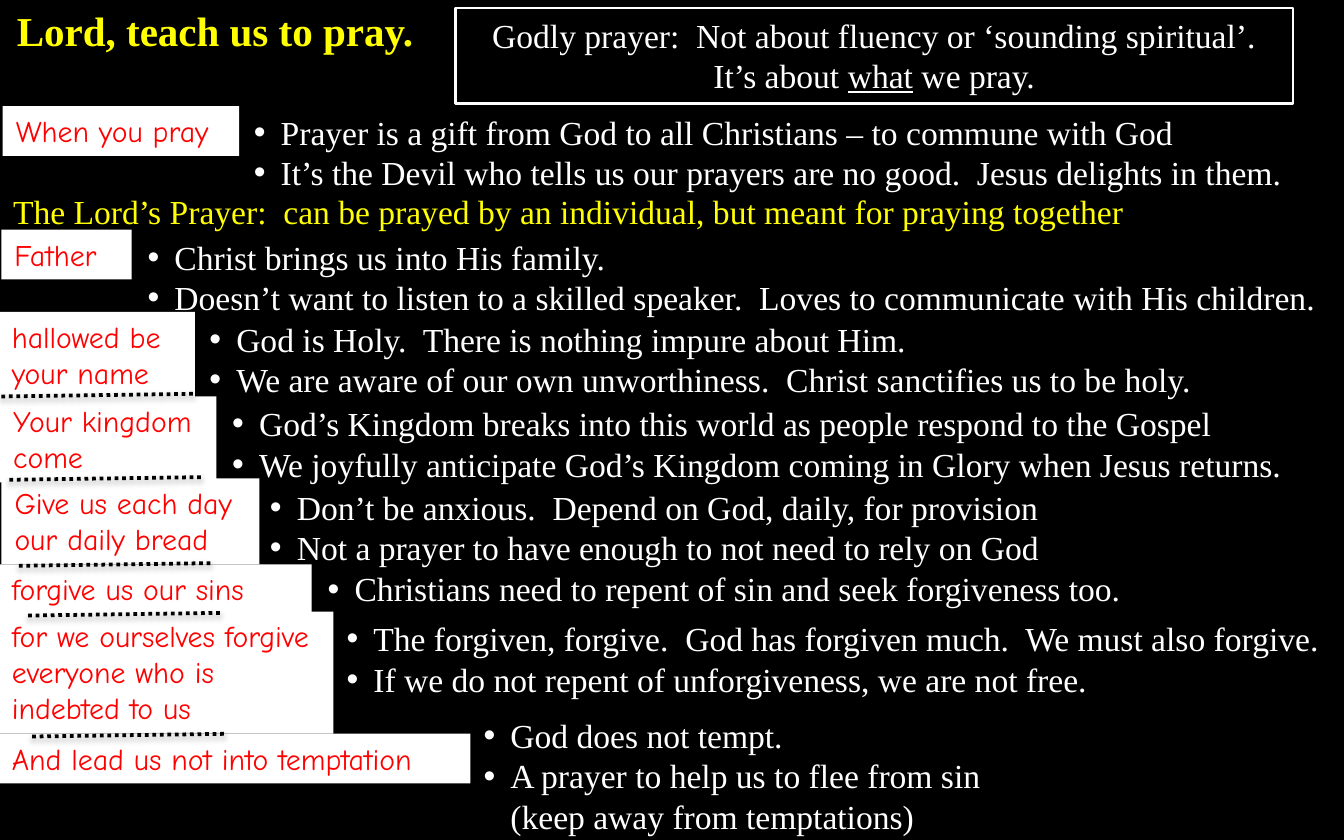
from lxml import etree
from pptx import Presentation
from pptx.dml.color import RGBColor
from pptx.enum.dml import MSO_LINE
from pptx.enum.shapes import MSO_CONNECTOR, MSO_SHAPE
from pptx.enum.text import MSO_ANCHOR, MSO_AUTO_SIZE, PP_ALIGN
from pptx.oxml import parse_xml
from pptx.oxml.ns import qn
from pptx.util import Inches, Pt

RECT, STRAIGHT = MSO_SHAPE.RECTANGLE, MSO_CONNECTOR.STRAIGHT
DOTS = MSO_LINE.ROUND_DOT
LEFT, CENTER = PP_ALIGN.LEFT, PP_ALIGN.CENTER
COLS, ROWS = 100, 62.5
CELL = Inches(0.1)
BLACK, WHITE, RED, YELLOW = "000000", "FFFFFF", "FF0000", "FFFF00"

SERIF = {"name": "Times New Roman", "size": Pt(18)}
HEAD = {"name": "Times New Roman", "size": Pt(22), "bold": True}
HAND = {"name": "Comic Neue", "size": Pt(16)}
FRAME = {"word_wrap": True, "auto_size": MSO_AUTO_SIZE.SHAPE_TO_FIT_TEXT,
         "vertical_anchor": MSO_ANCHOR.TOP}

SHADOW = (
    '<a:effectLst xmlns:a="http://schemas.openxmlformats.org/drawingml/2006/main">'
    '<a:outerShdw blurRad="40000" dist="20000" dir="5400000" rotWithShape="0">'
    '<a:srgbClr val="000000"><a:alpha val="38000"/></a:srgbClr>'
    '</a:outerShdw></a:effectLst>'
)

PARTS = [
    ((0.2, 7.9, 17.6), 1, "When you pray", (17.9, 7.8), [
        "Prayer is a gift from God to all Christians – to commune with God",
        "It’s the Devil who tells us our prayers are no good.  Jesus delights in them."]),
    ((0.1, 17.1, 9.7), 1, "Father", (10, 17.1), [
        "Christ brings us into His family.",
        "Doesn’t want to listen to a skilled speaker.  Loves to communicate with His children."]),
    ((-0.1, 23.2, 14.6), 2, "hallowed be your name", (14.6, 23.2), [
        "God is Holy.  There is nothing impure about Him.",
        "We are aware of our own unworthiness.  Christ sanctifies us to be holy."]),
    ((0, 29.5, 16.1), 2, "Your kingdom come", (16.3, 29.5), [
        "God’s Kingdom breaks into this world as people respond to the Gospel",
        "We joyfully anticipate God’s Kingdom coming in Glory when Jesus returns."]),
    ((0.1, 35.6, 19.2), 2, "Give us each day our daily bread", (19.1, 35.7), [
        "Don’t be anxious.  Depend on God, daily, for provision",
        "Not a prayer to have enough to not need to rely on God"]),
    ((-0.1, 42, 23.3), 1, "forgive us our sins", (23.4, 41.8), [
        "Christians need to repent of sin and seek forgiveness too."]),
    ((-0.1, 45.5, 24.9), 3, "for we ourselves forgive everyone who is indebted to us",
     (24.8, 45.5), [
        "The forgiven, forgive.  God has forgiven much.  We must also forgive.",
        "If we do not repent of unforgiveness, we are not free."]),
    ((-0.1, 54.6, 35.1), 1, "And lead us not into temptation", (35, 52.7), [
        "God does not tempt.",
        "A prayer to help us to flee from sin\n(keep away from temptations)"]),
]
RULES = [(0.1, 29.5), (0.7, 35.7), (1.4, 42.1), (2.1, 45.8), (2.4, 54.8)]


def color(code):
    return RGBColor.from_string(code)


def apply(item, style):
    for key, value in style.items():
        setattr(item, key, value)


def cells(box):
    return [int(size * CELL) for size in box]


def bullet(para):
    props = para._p.get_or_add_pPr()
    props.set("marL", str(Inches(0.2)))
    props.set("indent", str(-Inches(0.2)))
    etree.SubElement(props, qn("a:buFont")).set("typeface", "Arial")
    etree.SubElement(props, qn("a:buChar")).set("char", "•")


def write(shape, lines, style, code, align=LEFT, dots=False):
    frame = shape.text_frame
    apply(frame, FRAME)
    for num, line in enumerate(lines):
        para = frame.add_paragraph() if num else frame.paragraphs[0]
        para.text = line
        para.alignment = align
        if dots:
            bullet(para)
        for run in para.runs:
            apply(run.font, style)
            run.font.color.rgb = color(code)


def block(slide, box):
    shape = slide.shapes.add_shape(RECT, *cells(box))
    shape.shadow.inherit = False
    return shape


def title(slide, box):
    shape = slide.shapes.title
    apply(shape, dict(zip(("left", "top", "width", "height"), cells(box))))
    write(shape, ["Lord, teach us to pray."], HEAD, YELLOW, CENTER)


def theme(slide, box):
    shape = slide.shapes.add_textbox(*cells(box))
    write(shape, ["The Lord’s Prayer:  can be prayed by an individual, "
                  "but meant for praying together"], SERIF, YELLOW)


def banner(slide, box):
    shape = block(slide, box)
    shape.fill.background()
    shape.line.color.rgb = color(WHITE)
    shape.line.width = Pt(1.25)
    write(shape, ["Godly prayer:  Not about fluency or ‘sounding spiritual’.",
                  "It’s about "], SERIF, WHITE, CENTER)
    for text, under in (("what", True), (" we pray.", False)):
        run = shape.text_frame.paragraphs[1].add_run()
        run.text = text
        apply(run.font, {**SERIF, "underline": under})
        run.font.color.rgb = color(WHITE)


def label(slide, box, text):
    shape = block(slide, box)
    shape.fill.solid()
    shape.fill.fore_color.rgb = color(WHITE)
    shape.line.fill.background()
    write(shape, [text], HAND, RED)


def notes(slide, box, lines):
    shape = slide.shapes.add_textbox(*cells(box))
    write(shape, lines, SERIF, WHITE, dots=True)


def rule(slide, left, top):
    ends = cells((left, top, left + 14.45, top - 0.2))
    line = slide.shapes.add_connector(STRAIGHT, *ends)
    apply(line.line, {"width": Pt(2), "dash_style": DOTS})
    line.line.color.rgb = color(BLACK)
    line._element.spPr.append(parse_xml(SHADOW))


def main():
    deck = Presentation()
    deck.slide_width, deck.slide_height = cells((COLS, ROWS))
    slide = deck.slides.add_slide(deck.slide_layouts[5])
    slide.background.fill.solid()
    slide.background.fill.fore_color.rgb = color(BLACK)
    title(slide, (-0.3, -0.1, 32.6, 4.7))
    theme(slide, (0, 13.7, COLS, 4))
    banner(slide, (33.9, 0.6, 62.3, 7.1))
    for (left, top, width), deep, text, (col, row), lines in PARTS:
        label(slide, (left, top, width, 1 + 2.7 * deep), text)
        count = sum(1 + line.count("\n") for line in lines)
        notes(slide, (col, row, COLS - col, 1 + 3.03 * count), lines)
    for left, top in RULES:
        rule(slide, left, top)
    deck.save("out.pptx")


if __name__ == "__main__":
    main()
